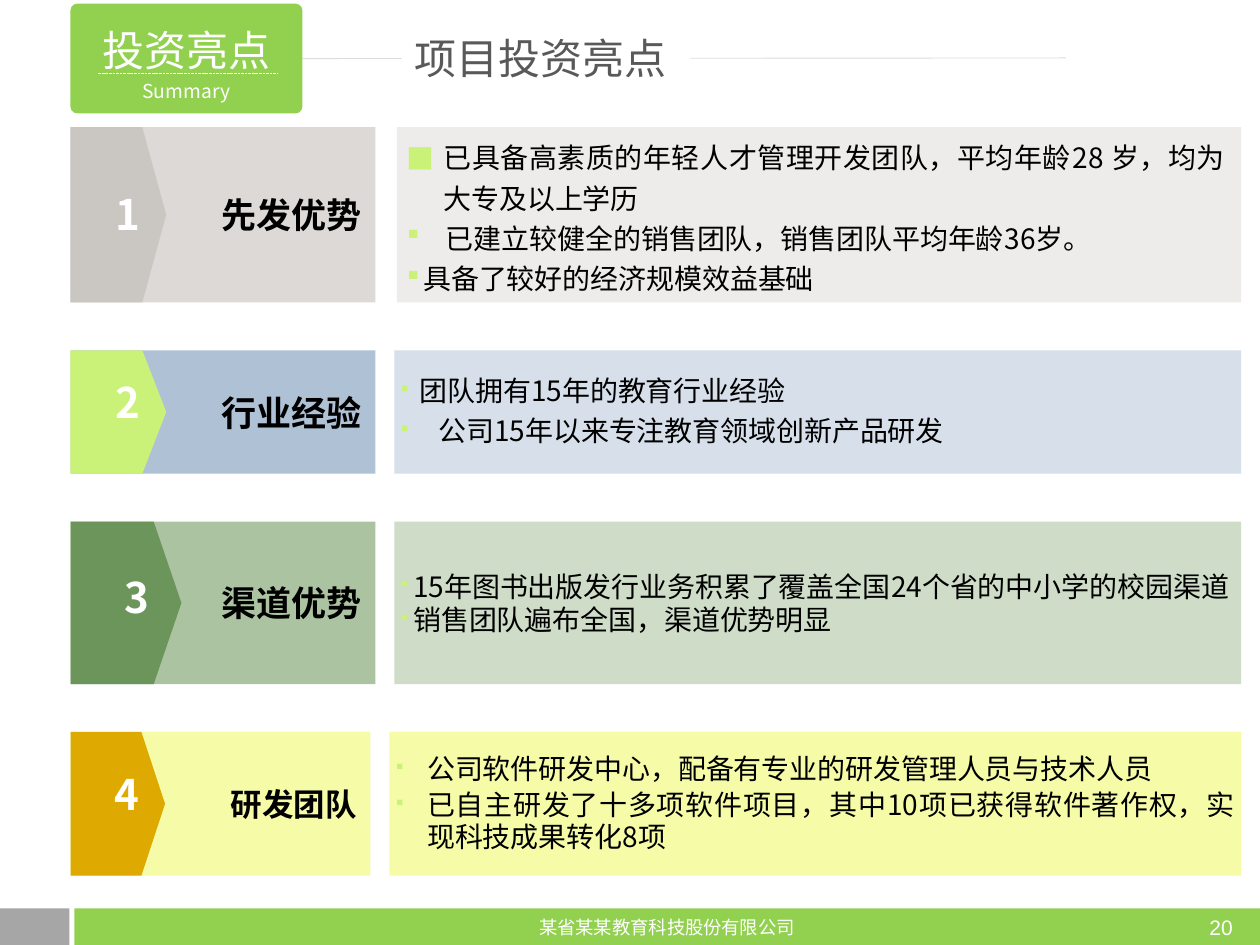
from dataclasses import dataclass

from lxml import etree
from pptx import Presentation
from pptx.dml.color import RGBColor
from pptx.enum.dml import MSO_LINE
from pptx.enum.shapes import MSO_CONNECTOR, MSO_SHAPE
from pptx.enum.text import MSO_ANCHOR, PP_ALIGN
from pptx.oxml.ns import qn
from pptx.util import Inches, Pt

RECT, ROUND = MSO_SHAPE.RECTANGLE, MSO_SHAPE.ROUNDED_RECTANGLE
ARROW, OVAL = MSO_SHAPE.PENTAGON, MSO_SHAPE.OVAL
STRAIGHT, DASH = MSO_CONNECTOR.STRAIGHT, MSO_LINE.SQUARE_DOT
LEFT_ALIGN, CENTER, JUSTIFY = PP_ALIGN.LEFT, PP_ALIGN.CENTER, PP_ALIGN.JUSTIFY
MIDDLE = MSO_ANCHOR.MIDDLE

WHITE = RGBColor(0xFF, 0xFF, 0xFF)
BLACK = RGBColor(0x00, 0x00, 0x00)
GREEN = RGBColor(0x92, 0xD0, 0x50)
LIME = RGBColor(0xCA, 0xF2, 0x78)
GRAY = RGBColor(0xA6, 0xA6, 0xA6)
PALE_GRAY = RGBColor(0xDD, 0xDD, 0xDD)
DARK_GRAY = RGBColor(0x59, 0x59, 0x59)
STONE = RGBColor(0xCA, 0xC6, 0xC2)
STONE_LIGHT = RGBColor(0xDC, 0xD9, 0xD6)
STONE_PALE = RGBColor(0xED, 0xEC, 0xEB)
BLUE = RGBColor(0xAF, 0xC1, 0xD5)
BLUE_PALE = RGBColor(0xD7, 0xE0, 0xEA)
FOREST = RGBColor(0x6B, 0x95, 0x5B)
FOREST_LIGHT = RGBColor(0xAB, 0xC3, 0xA1)
FOREST_PALE = RGBColor(0xCE, 0xDC, 0xC8)
GOLD = RGBColor(0xDE, 0xA9, 0x00)
YELLOW = RGBColor(0xF5, 0xFB, 0xA7)

FONT = "Noto Sans CJK SC"
# Grid, in inches
LEFT, RIGHT = 0.56, 9.85
FIRST_TOP, ROW_GAP = 1.01, 0.38
FOOTER_TOP, FOOTER_HEIGHT = 7.21, 0.29


@dataclass
class Bullet:
    text: str
    hang: float
    percent: int = 65
    symbol: str = "§"  # the square of Wingdings
    font: str = "Wingdings"


@dataclass
class Row:
    title: str
    bullets: list
    height: float
    colors: tuple  # arrow, label, panel
    arrow_width: float
    panel_left: float
    number_lift: float
    line_spacing: float
    gap: float
    label_width: float = 2.42
    label_inset: float = 1.2
    label_size: int = 20
    panel_insets: tuple = (0.05, 0.05)  # left, right


ROWS = [
    Row("先发优势",
        [Bullet("已具备高素质的年轻人才管理开发团队，平均年龄28 岁，均为大专及以上学历",
                0.29, 100, "■", FONT),
         Bullet("已建立较健全的销售团队，销售团队平均年龄36岁。", 0.31, 100),
         Bullet("具备了较好的经济规模效益基础", 0.13, 100)],
        1.39, (STONE, STONE_LIGHT, STONE_PALE), 0.76, 3.15, 0.01, 1.2, 0,
        panel_insets=(0.08, 0.13)),
    Row("行业经验",
        [Bullet("团队拥有15年的教育行业经验", 0.15),
         Bullet("公司15年以来专注教育领域创新产品研发", 0.3)],
        0.98, (LIME, BLUE, BLUE_PALE), 0.76, 3.13, 0.08, 0.95, 5),
    Row("渠道优势",
        [Bullet("15年图书出版发行业务积累了覆盖全国24个省的中小学的校园渠道", 0.1),
         Bullet("销售团队遍布全国，渠道优势明显", 0.1)],
        1.29, (FOREST, FOREST_LIGHT, FOREST_PALE), 0.88, 3.13, 0.05, 1, 0),
    Row("研发团队",
        [Bullet("公司软件研发中心，配备有专业的研发管理人员与技术人员", 0.25),
         Bullet("已自主研发了十多项软件项目，其中10项已获得软件著作权，实现科技成果转化8项", 0.25)],
        1.14, (GOLD, YELLOW, YELLOW), 0.75, 3.09, 0.08, 0.95, 2,
        label_width=2.38, label_inset=1.27, label_size=18),
]


def add_block(page, kind, left, top, width, height, fill=None):
    box = page.shapes.add_shape(
        kind, Inches(left), Inches(top), Inches(width), Inches(height))
    box.shadow.inherit = False
    box.line.fill.background()
    if fill is None:
        box.fill.background()
    else:
        box.fill.solid()
        box.fill.fore_color.rgb = fill
    return box


def set_frame(box, left=0.1, right=0.1, wrap=True):
    frame = box.text_frame
    frame.word_wrap = wrap
    frame.vertical_anchor = MIDDLE
    frame.margin_left, frame.margin_right = Inches(left), Inches(right)
    frame.margin_top = frame.margin_bottom = 0
    return frame


def style_para(para, text, size, color, align=CENTER, bold=False, name=FONT):
    para.text = text
    para.alignment = align
    font = para.font
    font.size, font.bold, font.name = Pt(size), bold, name
    font.color.rgb = color
    east_asian = etree.SubElement(para._p.pPr.find(qn("a:defRPr")), qn("a:ea"))
    east_asian.set("typeface", name)


def add_bullet(para, bullet):
    props = para._p.get_or_add_pPr()
    props.set("marL", str(Inches(bullet.hang)))
    props.set("indent", str(-Inches(bullet.hang)))
    color = etree.SubElement(props, qn("a:buClr"))
    etree.SubElement(color, qn("a:srgbClr")).set("val", str(LIME))
    etree.SubElement(props, qn("a:buSzPct")).set("val", str(bullet.percent * 1000))
    etree.SubElement(props, qn("a:buFont")).set("typeface", bullet.font)
    etree.SubElement(props, qn("a:buChar")).set("char", bullet.symbol)


def add_line(page, start, end, y, color, dash=None):
    line = page.shapes.add_connector(
        STRAIGHT, Inches(start), Inches(y), Inches(end), Inches(y))
    line.line.color.rgb = color
    line.line.width = Pt(0.5)
    if dash is not None:
        line.line.dash_style = dash
    etree.SubElement(line._element.spPr, qn("a:effectLst"))
    return line


def add_header(page):
    rule = add_line(page, 2.4, 8.46, 0.46, PALE_GRAY)
    badge = add_block(page, ROUND, LEFT, 0.03, 1.84, 0.87, GREEN)
    badge.adjustments[0] = 0.06
    rule.begin_connect(badge, 3)
    frame = set_frame(badge, 0, 0)
    for para, text, size in ((frame.paragraphs[0], "投资亮点", 24),
                             (frame.add_paragraph(), "Summary", 11)):
        style_para(para, text, size, WHITE)
        para.line_spacing = 1.2
    add_line(page, 0.78, 2.2, 0.58, WHITE, DASH)
    title = add_block(page, RECT, 3.19, 0.21, 2.29, 0.5, WHITE)
    style_para(set_frame(title).paragraphs[0], "项目投资亮点", 24, DARK_GRAY, LEFT_ALIGN)


def add_row(page, number, row, top):
    arrow_color, label_color, panel_color = row.colors
    # Label, arrow and number
    label = add_block(page, RECT, LEFT, top, row.label_width, row.height, label_color)
    style_para(set_frame(label, row.label_inset).paragraphs[0],
               row.title, row.label_size, BLACK, LEFT_ALIGN, True)
    arrow = add_block(page, ARROW, LEFT, top, row.arrow_width, row.height, arrow_color)
    arrow.adjustments[0] = 0.25
    width, height = 0.47, 0.53
    circle = add_block(page, OVAL, LEFT + 0.6 * row.arrow_width - width / 2,
                       top + (row.height - height) / 2 - row.number_lift, width, height)
    style_para(set_frame(circle, wrap=False).paragraphs[0],
               str(number), 24, WHITE, bold=True)
    # Panel with bullets
    panel = add_block(page, RECT, row.panel_left, top,
                      RIGHT - row.panel_left, row.height, panel_color)
    frame = set_frame(panel, *row.panel_insets)
    for index, bullet in enumerate(row.bullets):
        para = frame.add_paragraph() if index else frame.paragraphs[0]
        add_bullet(para, bullet)
        style_para(para, bullet.text, 16, BLACK, JUSTIFY)
        para.line_spacing = row.line_spacing
        para.space_before = Pt(row.gap if index else 0)


def add_footer(page):
    bar = add_block(page, RECT, 0.59, FOOTER_TOP, 9.41, FOOTER_HEIGHT, GREEN)
    style_para(set_frame(bar).paragraphs[0], "某省某某教育科技股份有限公司", 10.5, WHITE)
    add_block(page, RECT, 0, FOOTER_TOP, 0.55, FOOTER_HEIGHT, GRAY)
    number = page.shapes.add_textbox(
        Inches(9.5), Inches(FOOTER_TOP), Inches(0.48), Inches(FOOTER_HEIGHT))
    style_para(set_frame(number).paragraphs[0], "20", 12, WHITE, LEFT_ALIGN, name="Arial")


def main():
    deck = Presentation()
    deck.slide_width, deck.slide_height = Inches(10), Inches(7.5)
    page = deck.slides.add_slide(deck.slide_layouts[6])
    add_footer(page)
    add_header(page)
    top = FIRST_TOP
    for number, row in enumerate(ROWS, 1):
        add_row(page, number, row, top)
        top += row.height + ROW_GAP
    deck.save("out.pptx")


if __name__ == "__main__":
    main()
